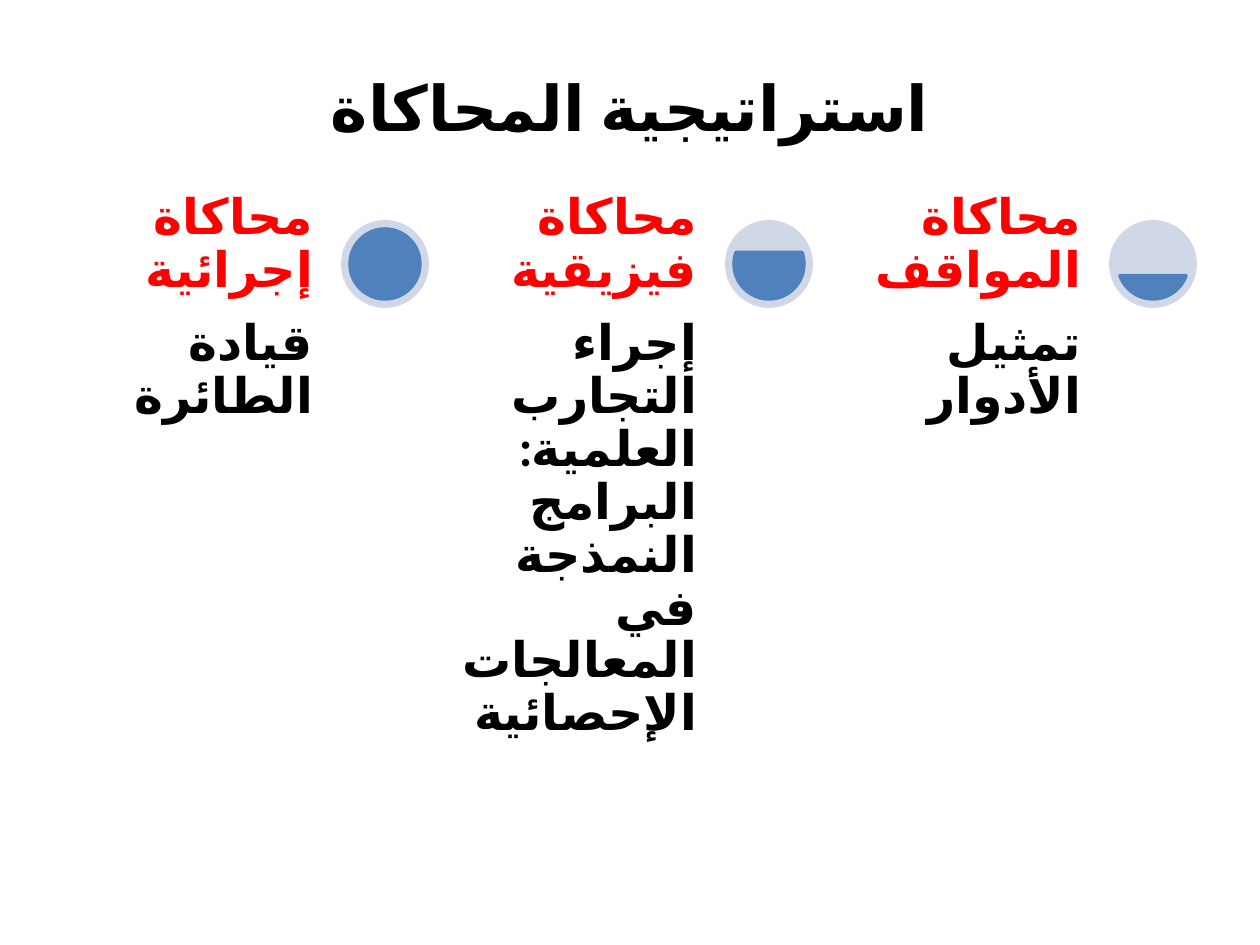
from math import asin, degrees

from lxml.etree import SubElement
from pptx import Presentation
from pptx.dml.color import RGBColor
from pptx.enum.lang import MSO_LANGUAGE_ID
from pptx.enum.shapes import MSO_SHAPE
from pptx.enum.text import MSO_ANCHOR, PP_ALIGN
from pptx.oxml.ns import qn
from pptx.util import Emu, Pt

FONT = "Lato"
MARGIN = 63
PITCH = 384
TEXT_WIDTH = 260
DIAL_OFFSET = 278
DIAL_SIZE = 88
DIAL_INSET = 9
HEADING_TOP = 220
BODY_HEIGHT = 369

# Columns from right to left: heading, body, share of the dial that is filled
COLUMNS = [
    ("محاكاة المواقف", "تمثيل الأدوار", 1 / 3),
    ("محاكاة فيزيقية",
     "إجراء التجارب العلمية: البرامج النمذجة في المعالجات الإحصائية", 2 / 3),
    ("محاكاة إجرائية", "قيادة الطائرة", 1),
]


def px(value):
    return Emu(round(value * 914400 / 126))


def color(value):
    return RGBColor.from_string(value)


def add_text(slide, text, box, size=28, fill="000000", align=PP_ALIGN.RIGHT,
             anchor=MSO_ANCHOR.TOP, inset=10, line_spacing=None, space_after=None):
    """Add bold right-to-left text; space_after is a share of the line."""
    frame = slide.shapes.add_textbox(*map(px, box)).text_frame
    frame.word_wrap = True
    frame.vertical_anchor = anchor
    frame.margin_left = frame.margin_right = px(inset)
    frame.margin_top = frame.margin_bottom = px(inset)
    paragraph = frame.paragraphs[0]
    paragraph.alignment = align
    if line_spacing:
        paragraph.line_spacing = line_spacing
    properties = paragraph._p.get_or_add_pPr()
    properties.set("rtl", "1")
    if space_after:
        spacing = SubElement(properties, qn("a:spcAft"))
        SubElement(spacing, qn("a:spcPct")).set("val", str(round(space_after * 100000)))
    run = paragraph.add_run()
    run.text = text
    run.font.size = Pt(size)
    run.font.bold = True
    run.font.name = FONT
    run.font.language_id = MSO_LANGUAGE_ID.ARABIC
    run.font.color.rgb = color(fill)
    SubElement(run._r.get_or_add_rPr(), qn("a:cs")).set("typeface", FONT)


def add_round_shape(slide, kind, left, top, size, fill):
    shape = slide.shapes.add_shape(kind, px(left), px(top), px(size), px(size))
    shape.shadow.inherit = False
    shape.fill.solid()
    shape.fill.fore_color.rgb = color(fill)
    shape.line.fill.background()
    return shape


def add_dial(slide, left, top, level):
    """Add a disc filled from the bottom up to the given level."""
    add_round_shape(slide, MSO_SHAPE.OVAL, left, top, DIAL_SIZE, "D0D8E8")
    chord = add_round_shape(slide, MSO_SHAPE.CHORD, left + DIAL_INSET, top + DIAL_INSET,
                            DIAL_SIZE - 2 * DIAL_INSET, "4F81BD")
    chord.line.color.rgb = color("4F81BD")
    chord.line.width = Pt(2)
    angle = degrees(asin(1 - 2 * level))
    # Angles are stored in 60000ths of a degree, adjustments in 100000ths
    chord.adjustments[0] = angle % 360 * 0.6
    chord.adjustments[1] = (180 - angle) * 0.6


def add_column(slide, left, heading, body, level):
    add_dial(slide, left + DIAL_OFFSET, HEADING_TOP, level)
    spacing = {"line_spacing": 0.9, "space_after": 0.35}
    add_text(slide, body, (left, HEADING_TOP + DIAL_SIZE, TEXT_WIDTH, BODY_HEIGHT), **spacing)
    add_text(slide, heading, (left, HEADING_TOP, TEXT_WIDTH, DIAL_SIZE),
             fill="FF0000", anchor=MSO_ANCHOR.BOTTOM, **spacing)


def main():
    presentation = Presentation()
    presentation.slide_width, presentation.slide_height = px(1260), px(945)
    slide = presentation.slides.add_slide(presentation.slide_layouts[6])
    add_text(slide, "استراتيجية المحاكاة", (MARGIN, 38, 1134, 137), size=36,
             align=PP_ALIGN.CENTER, anchor=MSO_ANCHOR.MIDDLE)
    for index, column in enumerate(COLUMNS):
        add_column(slide, MARGIN + (len(COLUMNS) - 1 - index) * PITCH, *column)
    presentation.save("out.pptx")


if __name__ == "__main__":
    main()
